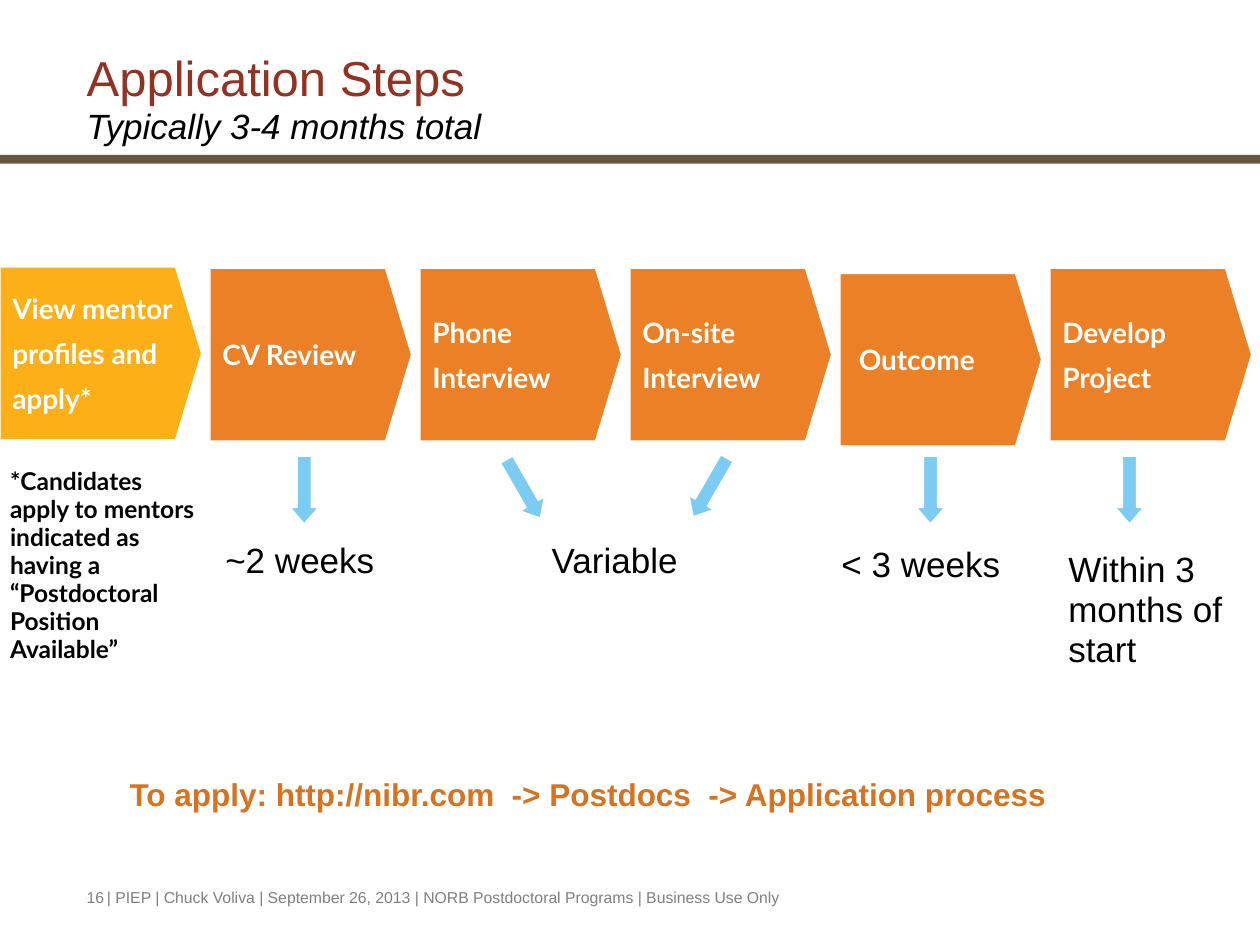
from pptx import Presentation
from pptx.dml.color import RGBColor
from pptx.enum.shapes import MSO_SHAPE
from pptx.enum.text import MSO_ANCHOR, PP_ALIGN
from pptx.util import Inches, Pt

WHITE = RGBColor(0xFF, 0xFF, 0xFF)
BLACK = RGBColor(0, 0, 0)
BROWN = RGBColor(0x6A, 0x55, 0x40)
RED = RGBColor(0x92, 0x32, 0x22)
YELLOW = RGBColor(0xFC, 0xAF, 0x17)
ORANGE = RGBColor(0xEC, 0x80, 0x26)
DARK_ORANGE = RGBColor(0xD6, 0x73, 0x21)
BLUE = RGBColor(0x7C, 0xCB, 0xF2)
GREY = RGBColor(0x7F, 0x7F, 0x7F)

STEP_PITCH = 10 / 6
# lines, top, fill, left inset
STEPS = [
    (["View mentor", "profiles and", "apply*"], 2.12, YELLOW, 0.1),
    (["CV Review"], 2.13, ORANGE, 0.1),
    (["Phone", "Interview"], 2.13, ORANGE, 0.1),
    (["On-site", "Interview"], 2.13, ORANGE, 0.1),
    (["Outcome"], 2.17, ORANGE, 0.15),
    (["Develop", "Project"], 2.13, ORANGE, 0.1),
]
# left, top, rotation
ARROWS = [(2.3, 3.62, 0), (4.04, 3.61, 330), (5.52, 3.6, 30),
          (7.27, 3.62, 0), (8.85, 3.62, 0)]
# text, left, top, width, height
DURATIONS = [
    ("~2 weeks", 1.69, 4.25, 1.5, 0.42),
    ("Variable", 4.28, 4.25, 1.22, 0.42),
    ("< 3 weeks", 6.58, 4.28, 1.47, 0.42),
    ("Within 3 months of start", 8.38, 4.32, 1.42, 1.06),
]


def set_font(target, color, **values):
    target.font.color.rgb = color
    for name, value in values.items():
        setattr(target.font, name, value)


def add_block(slide, kind, box, fill, line_width=None):
    """Add a flat preset shape, with a white outline if a width is given."""
    shape = slide.shapes.add_shape(kind, *map(Inches, box))
    shape.shadow.inherit = False
    shape.fill.solid()
    shape.fill.fore_color.rgb = fill
    if line_width is None:
        shape.line.fill.background()
    else:
        shape.line.color.rgb = WHITE
        shape.line.width = Pt(line_width)
    return shape


def add_text(slide, lines, box, color, spacing=1.0, anchor=MSO_ANCHOR.TOP,
             left_inset=0.1, **font):
    frame = slide.shapes.add_textbox(*map(Inches, box)).text_frame
    frame.word_wrap = True
    frame.vertical_anchor = anchor
    frame.margin_left = Inches(left_inset)
    frame.text = lines
    for paragraph in frame.paragraphs:
        paragraph.line_spacing = spacing
        set_font(paragraph, color, **font)
    return frame


def add_title(slide):
    frame = add_text(slide, "Application Steps", (0.59, 0.35, 9.07, 0.87), RED,
                     spacing=0.95, anchor=MSO_ANCHOR.BOTTOM,
                     name="Arial", size=Pt(28))
    paragraph = frame.paragraphs[0]
    paragraph.add_line_break()
    subtitle = paragraph.add_run()
    subtitle.text = "Typically 3-4 months total"
    set_font(subtitle, BLACK, name="Arial", size=Pt(20), italic=True)


def add_step(slide, index, lines, top, fill, left_inset):
    shape = add_block(slide, MSO_SHAPE.PENTAGON,
                      (index * STEP_PITCH, top, 1.6, 1.37), fill, 0.75)
    shape.adjustments[0] = 0.151
    frame = shape.text_frame
    frame.word_wrap = True
    frame.vertical_anchor = MSO_ANCHOR.MIDDLE
    frame.margin_left = Inches(left_inset)
    frame.margin_right = 0
    frame.text = "\n".join(lines)
    for paragraph in frame.paragraphs:
        paragraph.alignment = PP_ALIGN.LEFT
        paragraph.space_after = Pt(6.4)
        set_font(paragraph, WHITE, name="Lato", size=Pt(16), bold=True)


def add_arrow(slide, left, top, rotation):
    shape = add_block(slide, MSO_SHAPE.DOWN_ARROW, (left, top, 0.23, 0.54), BLUE, 1)
    shape.adjustments[1] = 0.578
    shape.rotation = rotation


def add_footer(slide):
    add_text(slide, "16", (0.59, 7, 0.44, 0.27), GREY, name="Arial", size=Pt(9))
    add_text(slide, "| PIEP | Chuck Voliva | September 26, 2013 | "
             "NORB Postdoctoral Programs | Business Use Only",
             (0.75, 7, 7.08, 0.27), GREY, name="Arial", size=Pt(9))


def main():
    presentation = Presentation()
    presentation.slide_width = Inches(10)
    presentation.slide_height = Inches(7.5)
    slide = presentation.slides.add_slide(presentation.slide_layouts[6])

    add_block(slide, MSO_SHAPE.RECTANGLE, (0, 1.23, 10, 0.07), BROWN)
    add_title(slide)
    for index, step in enumerate(STEPS):
        add_step(slide, index, *step)
    for arrow in ARROWS:
        add_arrow(slide, *arrow)
    for label, *box in DURATIONS:
        add_text(slide, label, box, BLACK, spacing=0.95, name="Arial", size=Pt(20))
    add_text(slide, "*Candidates apply to mentors indicated as having a "
             "“Postdoctoral Position Available”", (0, 3.67, 1.7, 2.13), BLACK,
             spacing=0.95, left_inset=0.08, name="Lato", size=Pt(14), bold=True)
    add_text(slide, "To apply: http://nibr.com  -> Postdocs  -> Application process",
             (0.93, 6.1, 8.32, 0.4), DARK_ORANGE, name="Arial", size=Pt(18), bold=True)
    add_footer(slide)
    presentation.save("out.pptx")


if __name__ == "__main__":
    main()
